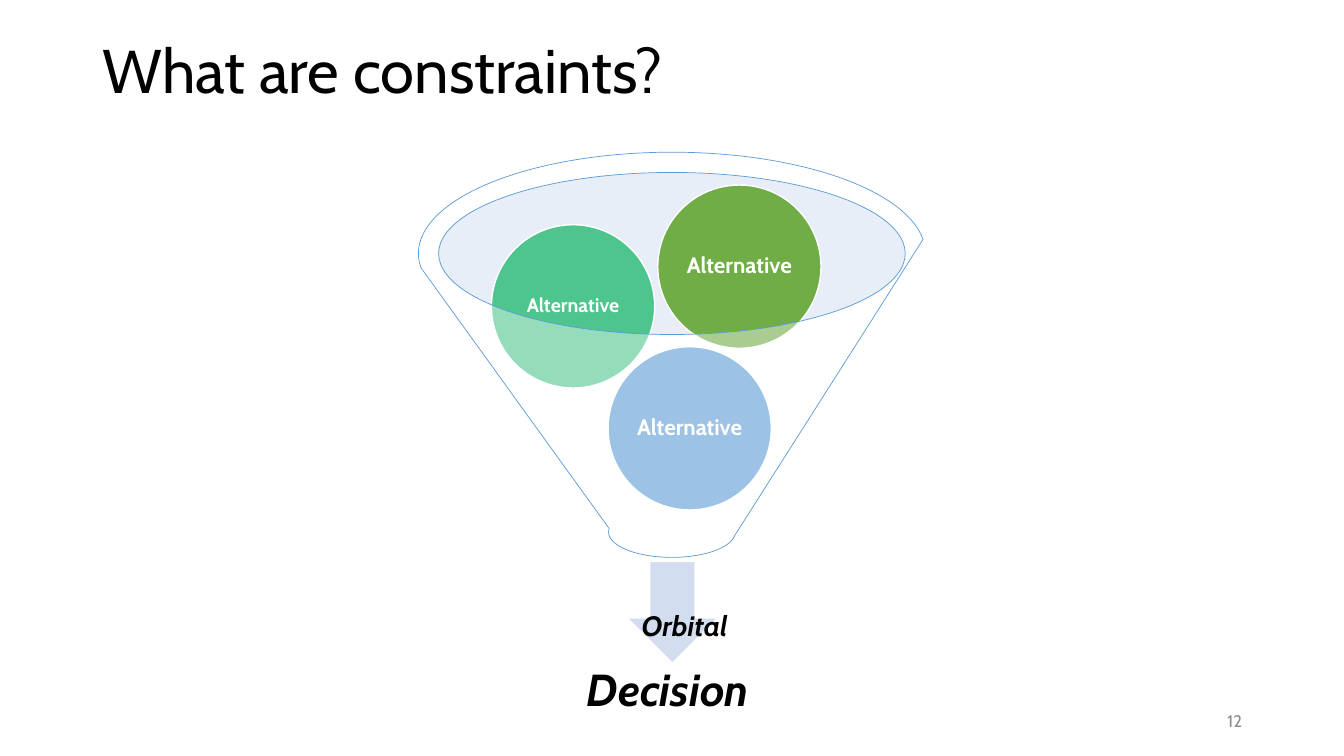
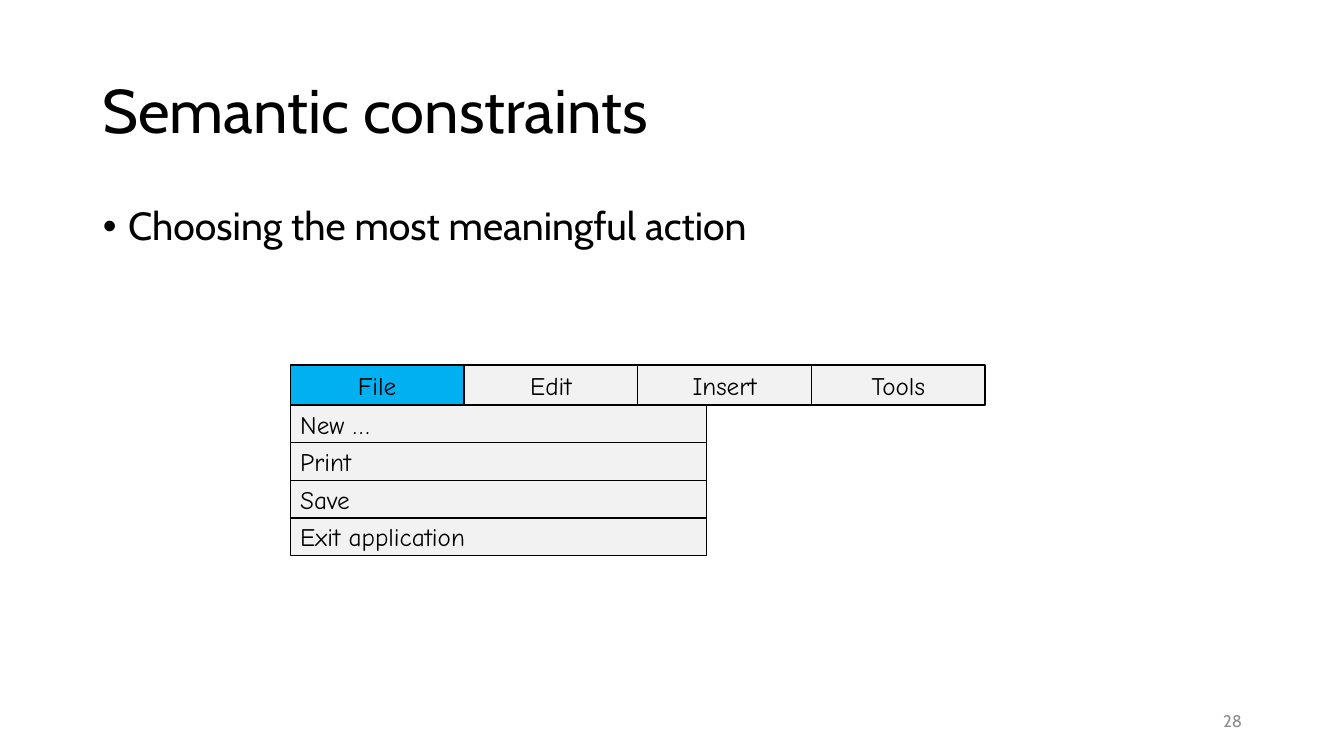
from dataclasses import dataclass

from lxml import etree
from pptx import Presentation
from pptx.dml.color import RGBColor
from pptx.enum.shapes import MSO_SHAPE
from pptx.enum.text import MSO_ANCHOR, MSO_AUTO_SIZE, PP_ALIGN
from pptx.oxml.ns import qn
from pptx.util import Inches, Pt

LEFT, CENTER, RIGHT = PP_ALIGN.LEFT, PP_ALIGN.CENTER, PP_ALIGN.RIGHT
TOP, MIDDLE = MSO_ANCHOR.TOP, MSO_ANCHOR.MIDDLE
OVAL, FUNNEL = MSO_SHAPE.OVAL, MSO_SHAPE.FUNNEL
ARROW, RECTANGLE = MSO_SHAPE.DOWN_ARROW, MSO_SHAPE.RECTANGLE
NO_AUTOFIT = MSO_AUTO_SIZE.NONE

TITLE_AND_CONTENT, TITLE_ONLY = 1, 5


@dataclass(frozen=True)
class Theme:
    font: str = "Cabin"
    menu_font: str = "Comic Neue"
    black: str = "000000"
    white: str = "FFFFFF"
    grey: str = "8C8C8C"
    blue: str = "5B9BD5"
    mint: str = "4DC58D"
    green: str = "70AD47"
    mouth: str = "C4D5EB"
    arrow: str = "D2DEEF"
    menu: str = "F2F2F2"
    selected: str = "00B0F0"
    title: int = 44
    outcome: int = 32
    body: int = 28
    choice: int = 20
    menu_text: int = 18
    label: int = 16
    small_label: int = 14
    number: int = 12


THEME = Theme()


@dataclass(frozen=True)
class Area:
    """A rectangle in inches."""
    left: float
    top: float
    width: float
    height: float

    def share(self, left, top, width, height):
        """Return a rectangle given in percent of this one."""
        return Area(self.left + self.width * left / 100,
                    self.top + self.height * top / 100,
                    self.width * width / 100,
                    self.height * height / 100)

    def emu(self):
        return [Inches(v) for v in (self.left, self.top, self.width, self.height)]


SLIDE = Area(0, 0, 13.33, 7.5)


def write(shape, text, size, color=THEME.black, font=THEME.font, align=LEFT,
          anchor=MIDDLE, spacing=1.0, inset=None, **style):
    """Fill the shape with one paragraph; style holds further font attributes."""
    frame = shape.text_frame
    frame.text = text
    frame.word_wrap = True
    frame.auto_size = NO_AUTOFIT
    frame.vertical_anchor = anchor
    if inset is not None:
        for side in ("left", "top", "right", "bottom"):
            setattr(frame, f"margin_{side}", Inches(inset))
    paragraph = frame.paragraphs[0]
    paragraph.alignment = align
    paragraph.line_spacing = spacing
    run_font = paragraph.runs[0].font
    run_font.color.rgb = RGBColor.from_string(color)
    for name, value in {"name": font, "size": Pt(size), **style}.items():
        setattr(run_font, name, value)
    return paragraph


def add_text(slide, area, text, size, **style):
    write(slide.shapes.add_textbox(*area.emu()), text, size, **style)


def add_figure(slide, kind, area, fill, line=None, weight=1, opacity=100):
    figure = slide.shapes.add_shape(kind, *area.emu())
    figure.shadow.inherit = False
    figure.fill.solid()
    figure.fill.fore_color.rgb = RGBColor.from_string(fill)
    if opacity < 100:
        tint = figure._element.spPr.find(f"{qn('a:solidFill')}/{qn('a:srgbClr')}")
        etree.SubElement(tint, qn("a:alpha"), val=str(opacity * 1000))
    if line:
        figure.line.color.rgb = RGBColor.from_string(line)
        figure.line.width = Pt(weight)
    else:
        figure.line.fill.background()
    return figure


def fill_placeholder(placeholder, area, text, size, **style):
    placeholder.left, placeholder.top, placeholder.width, placeholder.height = area.emu()
    return write(placeholder, text, size, spacing=0.9, **style)


def add_slide(deck, layout, title, title_top, number):
    slide = deck.slides.add_slide(deck.slide_layouts[layout])
    fill_placeholder(slide.shapes.title, SLIDE.share(6.87, title_top, 86.25, 19.33),
                     title, THEME.title)
    add_text(slide, SLIDE.share(70.67, 92.67, 22.5, 5.33), number, THEME.number,
             color=THEME.grey, align=RIGHT)
    return slide


def add_bullet(slide, text):
    paragraph = fill_placeholder(slide.placeholders[1],
                                 SLIDE.share(6.9, 26.67, 86.25, 63.47),
                                 text, THEME.body, anchor=TOP)
    paragraph.space_before = Pt(10)
    indent = Inches(0.25)
    properties = paragraph._p.get_or_add_pPr()
    properties.set("marL", str(indent))
    properties.set("indent", str(-indent))
    etree.SubElement(properties, qn("a:buChar"), char="•")


def add_funnel(slide):
    funnel = SLIDE.share(31.13, 20.13, 37.73, 53.6)
    add_figure(slide, OVAL, funnel.share(3.8, 5, 92.2, 40), THEME.mouth, opacity=40)
    alternatives = [
        (37.4, 48, THEME.blue, THEME.label),
        (14.4, 17.9, THEME.mint, THEME.small_label),
        (47.2, 8.1, THEME.green, THEME.label),
    ]
    for left, top, color, size in alternatives:
        ball = add_figure(slide, OVAL, funnel.share(left, top, 32.2, 40.3),
                          color, THEME.white)
        write(ball, "Alternative", size, color=THEME.white, align=CENTER,
              spacing=0.9, inset=0.02, bold=True)
    add_figure(slide, FUNNEL, funnel, THEME.white, THEME.blue, weight=0.5, opacity=40)


def add_decision(slide):
    add_figure(slide, ARROW, SLIDE.share(46.66, 74.27, 6.75, 13.47),
               THEME.arrow, THEME.white)
    emphasis = {"align": CENTER, "bold": True, "italic": True}
    add_text(slide, SLIDE.share(35.86, 88, 27.68, 7.2), "Decision", THEME.outcome,
             spacing=0.9, inset=0, **emphasis)
    add_text(slide, SLIDE.share(42.91, 79.73, 16.05, 5.87), "Orbital", THEME.choice,
             **emphasis)


def add_menu_cell(slide, area, text, align, fill=THEME.menu):
    cell = add_figure(slide, RECTANGLE, area, fill, THEME.black)
    write(cell, text, THEME.menu_text, font=THEME.menu_font, align=align)


def add_menu(slide, headings, commands, selected):
    bar = SLIDE.share(21.6, 48.27, 51.7, 5.33)
    width = 100 / len(headings)
    for column, heading in enumerate(headings):
        add_menu_cell(slide, bar.share(column * width, 0, width, 100), heading, CENTER,
                      THEME.selected if heading == selected else THEME.menu)
    drop_down = SLIDE.share(21.6, 53.6, 30.98, 19.87)
    height = 100 / len(commands)
    for row, command in enumerate(commands):
        add_menu_cell(slide, drop_down.share(0, row * height, 100, height), command, LEFT)


def main():
    deck = Presentation()
    deck.slide_width, deck.slide_height = Inches(SLIDE.width), Inches(SLIDE.height)

    definition = add_slide(deck, TITLE_ONLY, "What are constraints?", 0, "12")
    add_funnel(definition)
    add_decision(definition)

    semantic = add_slide(deck, TITLE_AND_CONTENT, "Semantic constraints", 5.33, "28")
    add_bullet(semantic, "Choosing the most meaningful action")
    add_menu(semantic, ["File", "Edit", "Insert", "Tools"],
             ["New …", "Print", "Save", "Exit application"], selected="File")

    deck.save("out.pptx")


if __name__ == "__main__":
    main()
